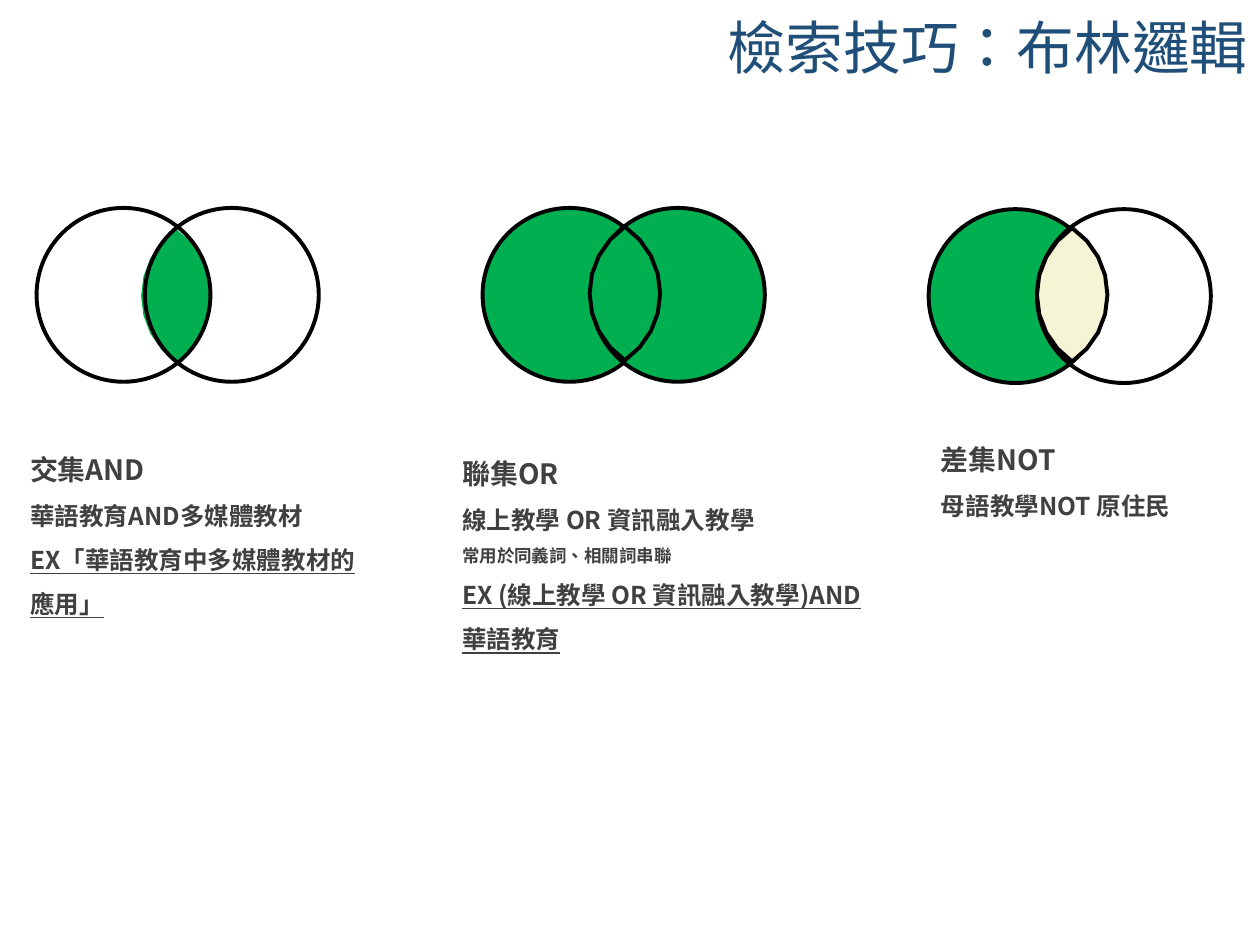
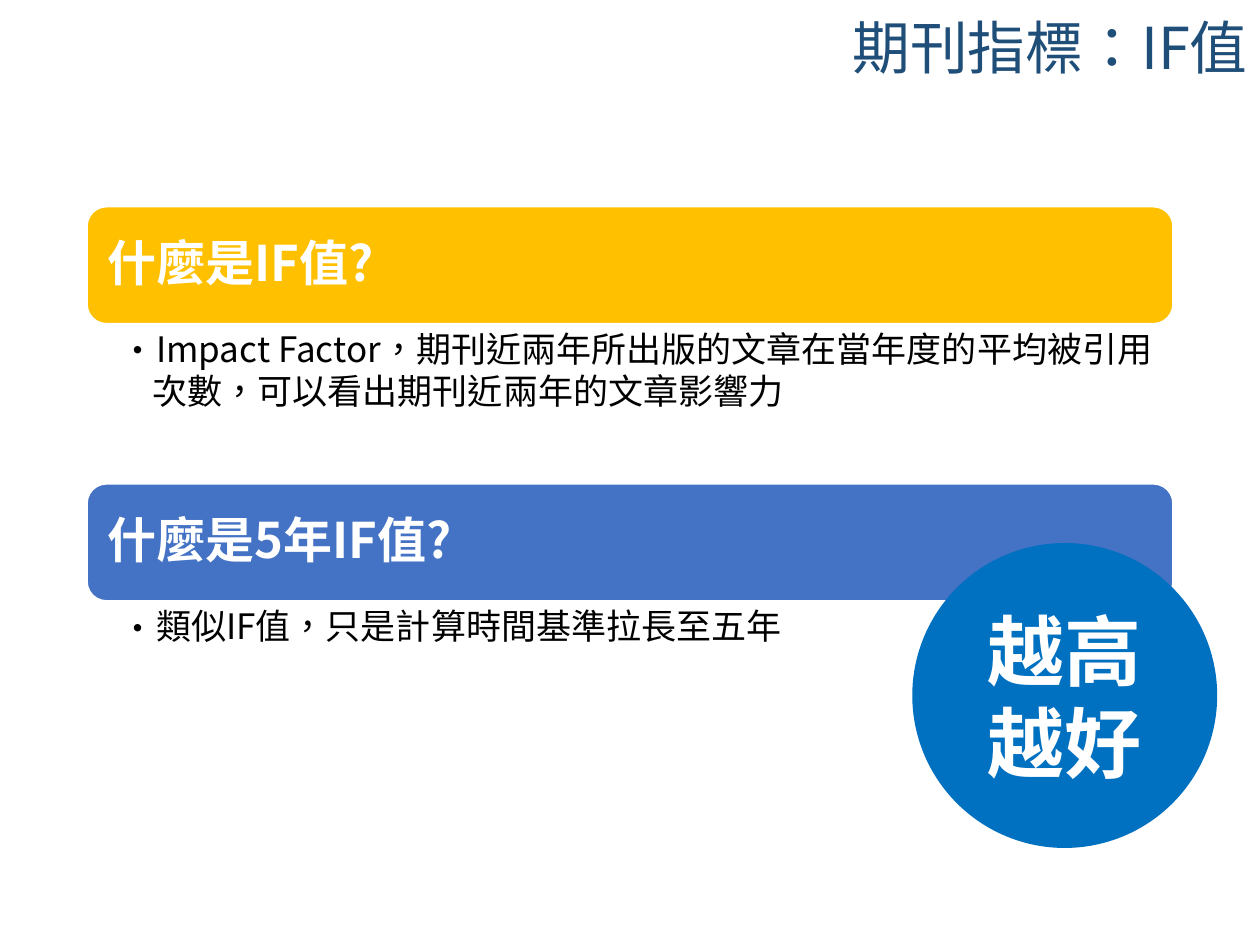
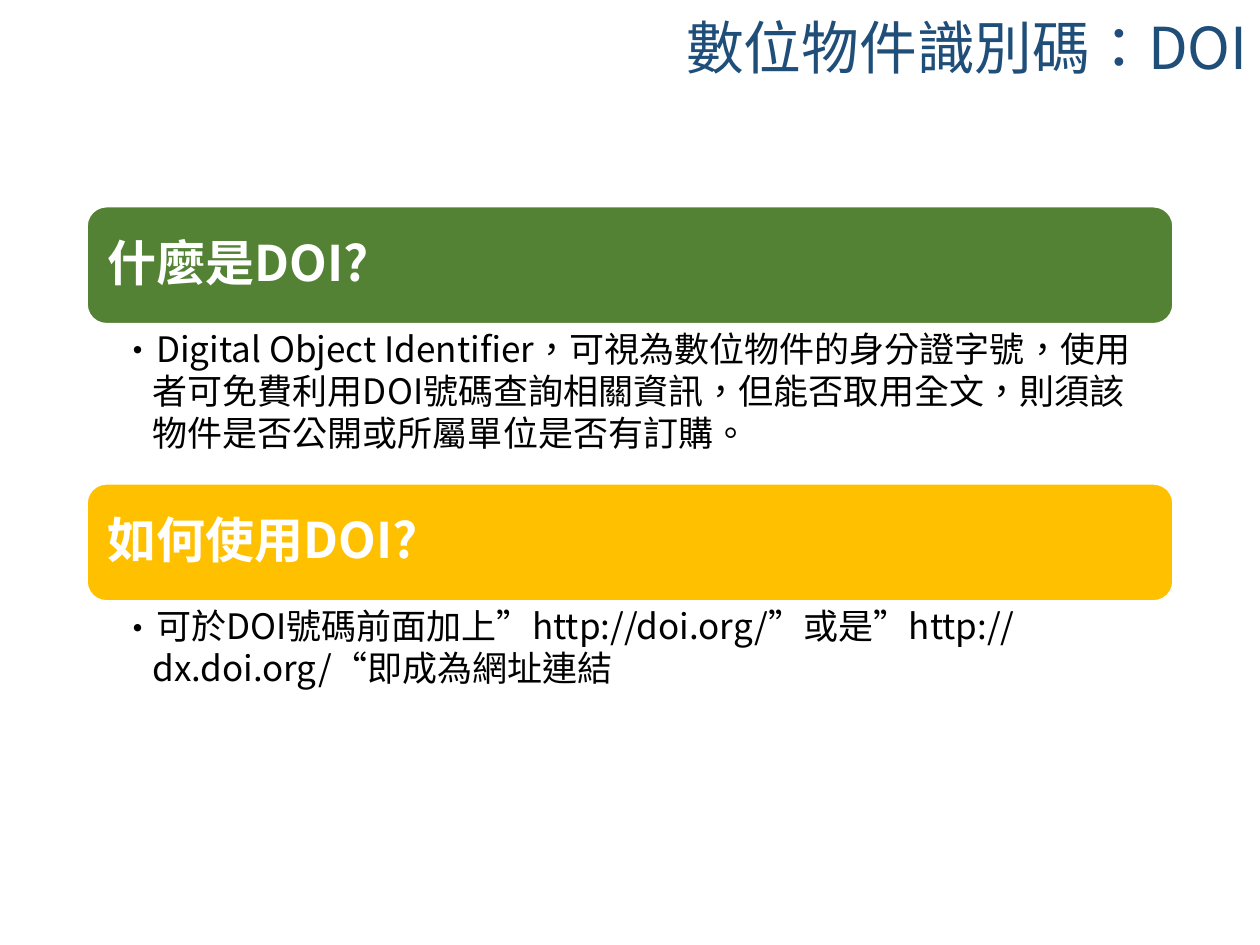
import math

import pptx
import pptx.dml.color
import pptx.enum.shapes
import pptx.enum.text
import pptx.oxml
import pptx.oxml.ns
import pptx.util
from pptx.util import Inches

RGBColor = pptx.dml.color.RGBColor
NAVY = RGBColor(0x1F, 0x4E, 0x79)
GRAY = RGBColor(0x40, 0x40, 0x40)
GREEN = RGBColor(0x00, 0xB0, 0x50)
CREAM = RGBColor(0xF5, 0xF4, 0xD5)
GOLD = RGBColor(0xFF, 0xC0, 0x00)
INDIGO = RGBColor(0x44, 0x72, 0xC4)
BLUE = RGBColor(0x00, 0x70, 0xC0)
OLIVE = RGBColor(0x54, 0x82, 0x35)
BLACK = RGBColor(0x00, 0x00, 0x00)
WHITE = RGBColor(0xFF, 0xFF, 0xFF)
FONT = "Noto Sans CJK SC"

SHAPES = pptx.enum.shapes.MSO_SHAPE
ALIGN = pptx.enum.text.PP_ALIGN
ANCHOR = pptx.enum.text.MSO_ANCHOR


def write_paragraph(paragraph, text, size, color, bold=False, align=ALIGN.LEFT, spacing=1.0):
    paragraph.text = text
    # Traditional Chinese centres the punctuation marks
    paragraph.runs[0].font._element.set("lang", "zh-TW")
    paragraph.alignment = align
    paragraph.line_spacing = spacing
    font = paragraph.font
    font.size = pptx.util.Pt(size)
    font.bold = bold
    font.color.rgb = color
    font.name = FONT
    # East Asian glyphs take their own typeface entry
    east_asian = pptx.oxml.parse_xml(
        f'<a:ea {pptx.oxml.ns.nsdecls("a")} typeface="{FONT}"/>')
    font._element.find(pptx.oxml.ns.qn("a:latin")).addnext(east_asian)


def style_shape(shape, fill=None, line=None, width=1):
    shape.shadow.inherit = False
    if fill is None:
        shape.fill.background()
    else:
        shape.fill.solid()
        shape.fill.fore_color.rgb = fill
    if line is None:
        shape.line.fill.background()
    else:
        shape.line.color.rgb = line
        shape.line.width = pptx.util.Pt(width)


presentation = pptx.Presentation()
presentation.slide_width = Inches(10)
presentation.slide_height = Inches(7.5)

# Slides with their shared title
slides = []
for title in ["檢索技巧：布林邏輯", "期刊指標：IF值", "數位物件識別碼：DOI"]:
    slide = presentation.slides.add_slide(presentation.slide_layouts[6])
    box = slide.shapes.add_textbox(Inches(4.25), 0, Inches(5.75), Inches(0.8))
    box.text_frame.word_wrap = True
    box.text_frame.vertical_anchor = ANCHOR.MIDDLE
    write_paragraph(box.text_frame.paragraphs[0], title, 33, NAVY, align=ALIGN.RIGHT, spacing=0.9)
    slides.append(slide)
boolean_slide, impact_slide, doi_slide = slides

# Slide 1: Venn diagrams
# left, top, circle fills, lens left, lens top, lens fill, lens line
diagrams = [
    (0.29, 1.65, (None, None), 1.12, 1.82, GREEN, None),
    (3.83, 1.65, (GREEN, GREEN), 4.68, 1.8, GREEN, BLACK),
    (7.37, 1.66, (GREEN, None), 8.23, 1.81, CREAM, BLACK),
]
half_width, half_height = 0.28, 0.53
radius = (half_width ** 2 + half_height ** 2) / (2 * half_width)
arc_angle = math.asin(half_height / radius)
steps = 8

for left, top, circle_fills, lens_left, lens_top, lens_fill, lens_line in diagrams:
    center_x, center_y = lens_left + half_width, lens_top + half_height
    outline = []
    for side in (1, -1):
        for step in range(steps):
            angle = arc_angle * (2 * step / steps - 1)
            x = center_x + side * (radius * math.cos(angle) - radius + half_width)
            y = center_y + side * radius * math.sin(angle)
            outline.append((Inches(x), Inches(y)))
    builder = boolean_slide.shapes.build_freeform(*outline[0])
    builder.add_line_segments(outline[1:], close=True)
    lens = builder.convert_to_shape()
    style_shape(lens, lens_fill, lens_line, 2.25)
    for index, fill in enumerate(circle_fills):
        circle = boolean_slide.shapes.add_shape(
            SHAPES.OVAL, Inches(left + 0.86 * index), Inches(top), Inches(1.38), Inches(1.38))
        style_shape(circle, fill, BLACK, 2.25)
    if lens_line is not None:  # an outlined lens lies over its circles
        boolean_slide.shapes._spTree.append(lens._element)

# Slide 1: explanations as (text, size, underlined)
explanations = [
    (0.14, 3.41, 2.79, 1.57, [
        ("交集AND", 16, False),
        ("華語教育AND多媒體教材", 14, False),
        ("EX「華語教育中多媒體教材的應用」", 14, True)]),
    (3.57, 3.44, 3.42, 1.82, [
        ("聯集OR", 16, False),
        ("線上教學 OR 資訊融入教學", 14, False),
        ("常用於同義詞、相關詞串聯", 10, False),
        ("EX (線上教學 OR 資訊融入教學)AND華語教育", 14, True)]),
    (7.37, 3.33, 2.23, 0.86, [
        ("差集NOT", 16, False),
        ("母語教學NOT 原住民", 14, False)]),
]
for left, top, width, height, lines in explanations:
    box = boolean_slide.shapes.add_textbox(Inches(left), Inches(top), Inches(width), Inches(height))
    frame = box.text_frame
    frame.word_wrap = True
    for index, (text, size, underlined) in enumerate(lines):
        paragraph = frame.add_paragraph() if index else frame.paragraphs[0]
        write_paragraph(paragraph, text, size, GRAY, bold=True, spacing=1.5)
        paragraph.font.underline = underlined

# Slides 2 and 3: question bars with bulleted answers (fill, question, answer, answer height)
questions = [
    (impact_slide, [
        (GOLD, "什麼是IF值?",
         "Impact Factor，期刊近兩年所出版的文章在當年度的平均被引用次數，可以看出期刊近兩年的文章影響力",
         1.18),
        (INDIGO, "什麼是5年IF值?", "類似IF值，只是計算時間基準拉長至五年", 1.18)]),
    (doi_slide, [
        (OLIVE, "什麼是DOI?",
         "Digital Object Identifier，可視為數位物件的身分證字號，使用者可免費利用DOI號碼查詢相關資訊，"
         "但能否取用全文，則須該物件是否公開或所屬單位是否有訂購。", 1.18),
        (GOLD, "如何使用DOI?",
         "可於DOI號碼前面加上”http://doi.org/”或是”http://dx.doi.org/“即成為網址連結", 1.87)]),
]
bar_left, bar_width, bar_height = 0.69, 8.62, 0.93
for slide, entries in questions:
    for row, (color, question, answer, answer_height) in enumerate(entries):
        top = 1.64 + 2.2 * row
        bar = slide.shapes.add_shape(
            SHAPES.ROUNDED_RECTANGLE, Inches(bar_left), Inches(top),
            Inches(bar_width), Inches(bar_height))
        style_shape(bar, color, WHITE)
        frame = bar.text_frame
        frame.word_wrap = True
        frame.vertical_anchor = ANCHOR.MIDDLE
        frame.margin_left = frame.margin_right = Inches(0.12)
        frame.margin_top = frame.margin_bottom = Inches(0.12)
        write_paragraph(frame.paragraphs[0], question, 28, WHITE, bold=True, spacing=0.9)

        left, right = Inches(bar_left), Inches(bar_left + bar_width)
        answer_top = Inches(top + bar_height)
        bottom = answer_top + Inches(answer_height)
        builder = slide.shapes.build_freeform(left, answer_top)
        builder.add_line_segments([(right, answer_top), (right, bottom), (left, bottom)], close=True)
        panel = builder.convert_to_shape()
        style_shape(panel)
        frame = panel.text_frame
        frame.word_wrap = True
        frame.vertical_anchor = ANCHOR.TOP
        frame.margin_left, frame.margin_right = Inches(0.27), Inches(0.16)
        frame.margin_top = frame.margin_bottom = Inches(0.03)
        paragraph = frame.paragraphs[0]
        paragraph.level = 1
        properties = paragraph._p.get_or_add_pPr()
        properties.set("marL", str(Inches(0.25)))
        properties.set("indent", str(-Inches(0.25)))
        for bullet in (f'buFont {pptx.oxml.ns.nsdecls("a")} typeface="{FONT}"',
                       f'buChar {pptx.oxml.ns.nsdecls("a")} char="••"'):
            properties.append(pptx.oxml.parse_xml(f"<a:{bullet}/>"))
        write_paragraph(paragraph, answer, 20, BLACK)

# Slide 2: verdict circle
verdict = impact_slide.shapes.add_shape(
    SHAPES.OVAL, Inches(7.24), Inches(4.31), Inches(2.42), Inches(2.42))
style_shape(verdict, BLUE)
frame = verdict.text_frame
frame.word_wrap = True
frame.vertical_anchor = ANCHOR.MIDDLE
for index, text in enumerate(["越高", "越好"]):
    paragraph = frame.add_paragraph() if index else frame.paragraphs[0]
    write_paragraph(paragraph, text, 44, WHITE, bold=True, align=ALIGN.CENTER)

presentation.save("out.pptx")
